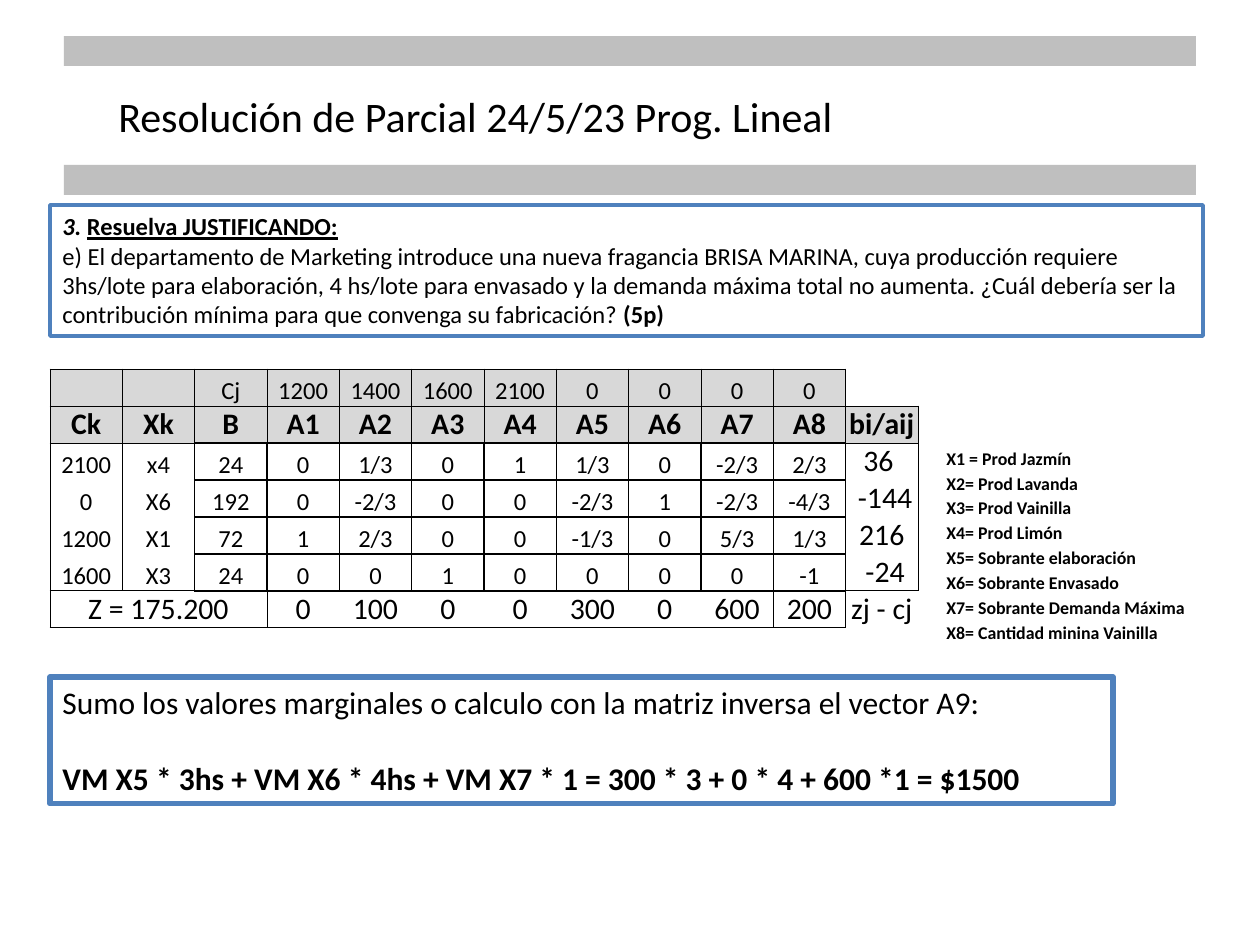
from lxml import etree
from pptx import Presentation
from pptx.dml.color import RGBColor
from pptx.enum.shapes import MSO_SHAPE
from pptx.enum.text import MSO_ANCHOR, PP_ALIGN
from pptx.oxml.ns import qn
from pptx.util import Emu, Pt

RECTANGLE = MSO_SHAPE.RECTANGLE
TOP, MIDDLE, BOTTOM = MSO_ANCHOR.TOP, MSO_ANCHOR.MIDDLE, MSO_ANCHOR.BOTTOM
LEFT, CENTER = PP_ALIGN.LEFT, PP_ALIGN.CENTER
EMU_PER_PX = 914400 / 126
FONT = "Calibri"
COLORS = {"text": "000000", "bar": "BFBFBF", "frame": "4F81BD",
          "header": "D8D8D8", "paper": "FFFFFF"}
THIN, THICK = 0.5, 1

TABLEAU = [
    ["", "", "Cj", "1200", "1400", "1600", "2100", "0", "0", "0", "0", ""],
    ["Ck", "Xk", "B", "A1", "A2", "A3", "A4", "A5", "A6", "A7", "A8", "bi/aij"],
    ["2100", "x4", "24", "0", "1/3", "0", "1", "1/3", "0", "-2/3", "2/3", "36 "],
    ["0", "X6", "192", "0", "-2/3", "0", "0", "-2/3", "1", "-2/3", "-4/3", " -144"],
    ["1200", "X1", "72", "1", "2/3", "0", "0", "-1/3", "0", "5/3", "1/3", "216"],
    ["1600", "X3", "24", "0", "0", "1", "0", "0", "0", "0", "-1", " -24"],
    ["Z = 175.200", "", "", "0", "100", "0", "0", "300", "0", "600", "200", "zj - cj"],
]
VARIABLES = [
    "X1 = Prod Jazmín", "X2= Prod Lavanda", "X3= Prod Vainilla", "X4= Prod Limón",
    "X5= Sobrante elaboración", "X6= Sobrante Envasado",
    "X7= Sobrante Demanda Máxima", "X8= Cantidad minina Vainilla",
]
QUESTION = (
    "e) El departamento de Marketing introduce una nueva fragancia BRISA MARINA, "
    "cuya producción requiere 3hs/lote para elaboración, 4 hs/lote para envasado y la "
    "demanda máxima total no aumenta. ¿Cuál debería ser la contribución mínima para "
    "que convenga su fabricación? "
)


def px(length):
    return Emu(round(length * EMU_PER_PX))


def box(*lengths):
    return [px(length) for length in lengths]


def color(name):
    return RGBColor.from_string(COLORS[name])


def style(paragraph, size, bold=None, align=LEFT):
    paragraph.alignment = align
    font = paragraph.font
    font.name, font.size, font.bold = FONT, Pt(size), bold
    font.color.rgb = color("text")


def add_run(paragraph, text, bold=None, italic=None, underline=None):
    run = paragraph.add_run()
    run.text = text
    run.font.bold, run.font.italic, run.font.underline = bold, italic, underline


def add_rectangle(slide, place, fill=None, line_width=None):
    rectangle = slide.shapes.add_shape(RECTANGLE, *box(*place))
    rectangle.shadow.inherit = False
    if fill:
        rectangle.fill.solid()
        rectangle.fill.fore_color.rgb = color(fill)
    else:
        rectangle.fill.background()
    if line_width:
        rectangle.line.color.rgb = color("frame")
        rectangle.line.width = Pt(line_width)
    else:
        rectangle.line.fill.background()
    return rectangle


def add_framed_text(slide, place, size, line_width, fill=None):
    frame = add_rectangle(slide, place, fill, line_width).text_frame
    frame.word_wrap = True
    frame.vertical_anchor = TOP
    paragraphs = [frame.paragraphs[0], frame.add_paragraph()]
    for paragraph in paragraphs:
        style(paragraph, size)
        for run_color in [paragraph.font.color]:
            run_color.rgb = color("text")
    return paragraphs


def add_title(slide, text):
    title = slide.shapes.title
    title.left, title.top, title.width, title.height = box(63, 38, 825, 156)
    title.text_frame.text = text
    title.text_frame.vertical_anchor = MIDDLE
    style(title.text_frame.paragraphs[0], 24, align=CENTER)


def edge_widths(row, col):
    ratio_col = col == 11
    if row == 0:
        return {"L": THIN, "B": THIN} if ratio_col else dict.fromkeys("LRTB", THIN)
    if row == 1:
        return {**dict.fromkeys("LRT", THIN), "B": THICK if 2 <= col <= 10 else THIN}
    if row == 6:
        if ratio_col:
            return {"L": THIN, "T": THIN}
        if col < 3:
            return dict.fromkeys("LRTB", THIN)
        sides = {"T": THICK, "B": THIN}
        if col in (3, 10):
            sides["L"] = THIN
        if col in (9, 10):
            sides["R"] = THIN
        return sides
    if 2 <= col <= 10:
        return dict.fromkeys("LRTB", THICK)
    sides = {"L": THICK if ratio_col else THIN, "R": THICK if col == 1 else THIN}
    if row == 2:
        sides["T"] = THIN
    if row == 5:
        sides["B"] = THIN
    return sides


def set_borders(cell, widths):
    properties = cell._tc.get_or_add_tcPr()
    for position, side in enumerate("LRTB"):
        line = etree.Element(qn(f"a:ln{side}"))
        if side in widths:
            line.set("w", str(Pt(widths[side])))
            fill = etree.SubElement(line, qn("a:solidFill"))
            etree.SubElement(fill, qn("a:srgbClr"), val=COLORS["text"])
        else:
            etree.SubElement(line, qn("a:noFill"))
        properties.insert(position, line)


def add_tableau(slide):
    rows, cols = len(TABLEAU), len(TABLEAU[0])
    table = slide.shapes.add_table(rows, cols, *box(50, 369, 868, 259)).table
    table.first_row = table.horz_banding = False
    for column in table.columns:
        column.width = px(868 / cols)
    for row, values in enumerate(TABLEAU):
        table.rows[row].height = px(37)
        for col, value in enumerate(values):
            cell = table.cell(row, col)
            cell.text = value
            cell.margin_left = cell.margin_right = cell.margin_top = cell.margin_bottom = 0
            cell.vertical_anchor = BOTTOM
            large = row in (1, 6) or (col == 11 and row > 0)
            style(cell.text_frame.paragraphs[0], 17 if large else 14, row == 1, CENTER)
            if row == 1 or (row == 0 and col < 11):
                cell.fill.solid()
                cell.fill.fore_color.rgb = color("header")
            else:
                cell.fill.background()
            set_borders(cell, edge_widths(row, col))
    table.cell(6, 0).merge(table.cell(6, 2))


def add_legend(slide):
    frame = slide.shapes.add_textbox(*box(934, 441, 326, 184)).text_frame
    frame.word_wrap = True
    for index, variable in enumerate(VARIABLES):
        paragraph = frame.add_paragraph() if index else frame.paragraphs[0]
        paragraph.text = variable
        style(paragraph, 10.2, True)
        if index:
            paragraph.space_before = Pt(2)


def main():
    deck = Presentation()
    deck.slide_width, deck.slide_height = box(1260, 945)
    slide = deck.slides.add_slide(deck.slide_layouts[5])
    for bar_top in (36, 165):
        add_rectangle(slide, (64, bar_top, 1132, 30), "bar")
    add_title(slide, "Resolución de Parcial 24/5/23 Prog. Lineal")

    heading, question = add_framed_text(slide, (50, 205, 1153, 131), 14, 2, "paper")
    add_run(heading, "3. ", bold=True, italic=True)
    add_run(heading, "Resuelva JUSTIFICANDO:", bold=True, underline=True)
    add_run(question, QUESTION)
    add_run(question, "(5p)", bold=True)

    add_tableau(slide)
    add_legend(slide)

    method, result = add_framed_text(slide, (50, 677, 1063, 127), 18, 3)
    add_run(method, "Sumo los valores marginales o calculo con la matriz inversa el vector A9:")
    add_run(result, "VM X5 * 3hs + VM X6 * 4hs + VM X7 * 1 = 300 * 3 + 0 * 4 + 600 *1 = $1500",
            bold=True)
    result.space_before = Pt(22)
    deck.save("out.pptx")


if __name__ == "__main__":
    main()
